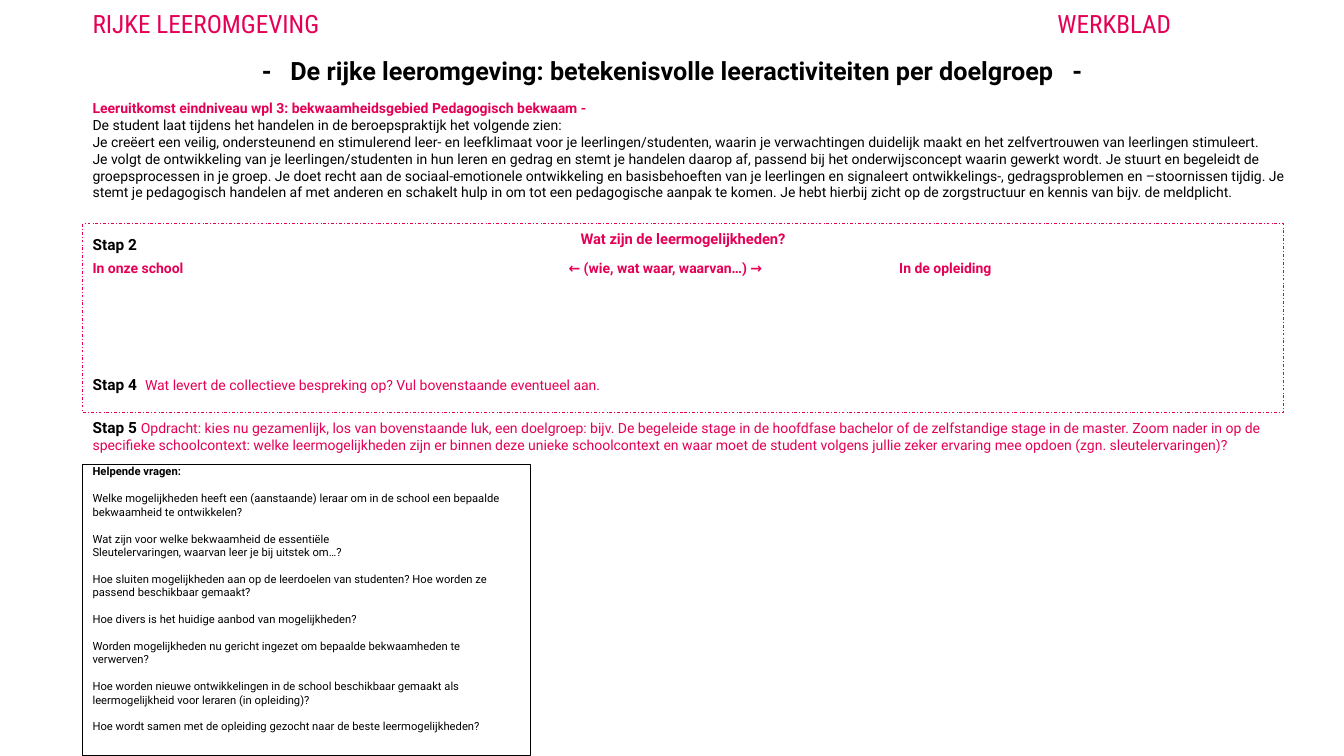
from pptx import Presentation
from pptx.dml.color import RGBColor
from pptx.enum.dml import MSO_LINE
from pptx.enum.shapes import MSO_SHAPE
from pptx.enum.text import MSO_ANCHOR, PP_ALIGN
from pptx.oxml.ns import qn
from pptx.util import Inches, Pt
from lxml.etree import SubElement

PINK = RGBColor(0xE5, 0x00, 0x56)
BLACK = RGBColor(0x00, 0x00, 0x00)
WHITE = RGBColor(0xFF, 0xFF, 0xFF)
LEFT = 0.82

# A run is (text, size, colour, bold)
HEADER = [("RIJKE LEEROMGEVING\tWERKBLAD", 18, PINK, False)]
TITLE = ["-", " ", "De rijke leeromgeving: betekenisvolle leeractiviteiten per doelgroep", " ", "-"]
OUTCOME_HEADING = "Leeruitkomst eindniveau wpl 3: bekwaamheidsgebied Pedagogisch bekwaam -"
OUTCOME_LINES = [
    "De student laat tijdens het handelen in de beroepspraktijk het volgende zien:",
    "Je creëert een veilig, ondersteunend en stimulerend leer- en leefklimaat voor je "
    "leerlingen/studenten, waarin je verwachtingen duidelijk maakt en het zelfvertrouwen van "
    "leerlingen stimuleert.",
    "Je volgt de ontwikkeling van je leerlingen/studenten in hun leren en gedrag en stemt je "
    "handelen daarop af, passend bij het onderwijsconcept waarin gewerkt wordt. Je stuurt en "
    "begeleidt de groepsprocessen in je groep. Je doet recht aan de sociaal-emotionele "
    "ontwikkeling en basisbehoeften van je leerlingen en signaleert ontwikkelings-, "
    "gedragsproblemen en –stoornissen tijdig. Je stemt je pedagogisch handelen af met anderen en "
    "schakelt hulp in om tot een pedagogische aanpak te komen. Je hebt hierbij zicht op de "
    "zorgstructuur en kennis van bijv. de meldplicht.",
]
OPPORTUNITIES_HEADING = [("Wat zijn de leermogelijkheden?", 10.5, PINK, True)]
OPPORTUNITIES_COLUMNS = [
    ("In onze school\t← (wie, wat waar, waarvan…) →\tIn de opleiding", 10, PINK, True)]
STEP_2 = [("Stap 2", 11, BLACK, True)]
STEP_4 = [
    ("Stap 4\t", 11, BLACK, True),
    ("Wat levert de collectieve bespreking op? Vul bovenstaande eventueel aan.", 10, PINK, False),
]
STEP_5 = [
    ("Stap 5 ", 11, BLACK, True),
    ("Opdracht: kies nu gezamenlijk, los van bovenstaande luk, een doelgroep: bijv. De begeleide "
     "stage in de hoofdfase bachelor of de zelfstandige stage in de master. Zoom nader in op de "
     "specifieke schoolcontext: welke leermogelijkheden zijn er binnen deze unieke schoolcontext "
     "en waar moet de student volgens jullie zeker ervaring mee opdoen (zgn. sleutelervaringen)?",
     10, PINK, False),
]
QUESTIONS_HEADING = "Helpende vragen:"
# Each question is a tuple of paragraphs
QUESTIONS = [
    ("Welke mogelijkheden heeft een (aanstaande) leraar om in de school een bepaalde "
     "bekwaamheid te ontwikkelen?",),
    ("Wat zijn voor welke bekwaamheid de essentiële",
     "Sleutelervaringen, waarvan leer je bij uitstek om…?"),
    ("Hoe sluiten mogelijkheden aan op de leerdoelen van studenten? Hoe worden ze passend "
     "beschikbaar gemaakt?",),
    ("Hoe divers is het huidige aanbod van mogelijkheden?",),
    ("Worden mogelijkheden nu gericht ingezet om bepaalde bekwaamheden te verwerven?",),
    ("Hoe worden nieuwe ontwikkelingen in de school beschikbaar gemaakt als leermogelijkheid "
     "voor leraren (in opleiding)?",),
    ("Hoe wordt samen met de opleiding gezocht naar de beste leermogelijkheden?",),
]


def add_box(slide, left, top, width, height, fill=None, line=None, line_width=0.5):
    shape = slide.shapes.add_shape(
        MSO_SHAPE.RECTANGLE, Inches(left), Inches(top), Inches(width), Inches(height))
    shape.shadow.inherit = False
    if fill is None:
        shape.fill.background()
    else:
        shape.fill.solid()
        shape.fill.fore_color.rgb = fill
    if line is None:
        shape.line.fill.background()
    else:
        shape.line.color.rgb = line
        shape.line.width = Pt(line_width)
    shape.text_frame.word_wrap = True
    shape.text_frame.vertical_anchor = MSO_ANCHOR.TOP
    return shape


def add_text(slide, left, top, width, height):
    box = slide.shapes.add_textbox(Inches(left), Inches(top), Inches(width), Inches(height))
    box.text_frame.word_wrap = True
    return box.text_frame


def write(frame, runs, first=False, align=PP_ALIGN.LEFT, line_spacing=1.0,
          before=0, after=0, tabs=(), font="Roboto"):
    paragraph = frame.paragraphs[0] if first else frame.add_paragraph()
    paragraph.alignment = align
    paragraph.line_spacing = line_spacing
    paragraph.space_before = Pt(before)
    paragraph.space_after = Pt(after)
    if tabs:
        tab_list = SubElement(paragraph._p.get_or_add_pPr(), qn("a:tabLst"))
        for position in tabs:
            SubElement(tab_list, qn("a:tab"), pos=str(Inches(position)), algn="l")
    for text, size, color, bold in runs:
        run = paragraph.add_run()
        run.text = text
        run.font.name = font
        run.font.size = Pt(size)
        run.font.color.rgb = color
        run.font.bold = bold
    return paragraph


def main():
    presentation = Presentation()
    presentation.slide_width = Inches(13.33)
    presentation.slide_height = Inches(7.5)
    slide = presentation.slides.add_slide(presentation.slide_layouts[6])

    write(add_text(slide, LEFT, 0, 11.44, 0.64), HEADER, first=True,
          line_spacing=1.1, tabs=[9.57], font="Roboto Condensed")

    title = add_box(slide, 1.26, 0.48, 10.81, 0.32, fill=WHITE)
    paragraph = write(title.text_frame, [(part, 18, BLACK, True) for part in TITLE], first=True,
                      align=PP_ALIGN.CENTER, line_spacing=1.07, after=8)
    for run in paragraph.runs:
        if run.text == " ":
            run.font._element.set("spc", "890")  # widens the gap beside each dash

    outcome = add_text(slide, LEFT, 0.94, 12.13, 1.11)
    write(outcome, [(OUTCOME_HEADING, 10, PINK, True)], first=True)
    for line in OUTCOME_LINES:
        write(outcome, [(line, 10, BLACK, False)])

    opportunities = add_box(slide, LEFT, 2.22, 11.91, 1.87, fill=WHITE, line=PINK)
    opportunities.line.dash_style = MSO_LINE.DASH_DOT
    write(opportunities.text_frame, OPPORTUNITIES_HEADING, first=True,
          align=PP_ALIGN.CENTER, line_spacing=1.07, after=8)
    write(opportunities.text_frame, OPPORTUNITIES_COLUMNS,
          line_spacing=1.07, after=8, tabs=[4.72, 8])

    write(add_text(slide, LEFT, 3.67, 10.53, 0.29), STEP_4, first=True, tabs=[0.52])
    write(add_text(slide, LEFT, 2.28, 1.14, 0.29), STEP_2, first=True)
    write(add_text(slide, LEFT, 4.1, 11.91, 0.64), STEP_5, first=True)

    questions = add_box(slide, LEFT, 4.61, 4.44, 2.89, line=BLACK, line_width=0.75).text_frame
    questions.margin_top = 0
    write(questions, [(QUESTIONS_HEADING, 8, BLACK, True)], first=True)
    for question in QUESTIONS:
        for index, line in enumerate(question):
            write(questions, [(line, 8, BLACK, False)], before=0 if index else 9.6)

    presentation.save("out.pptx")


if __name__ == "__main__":
    main()
